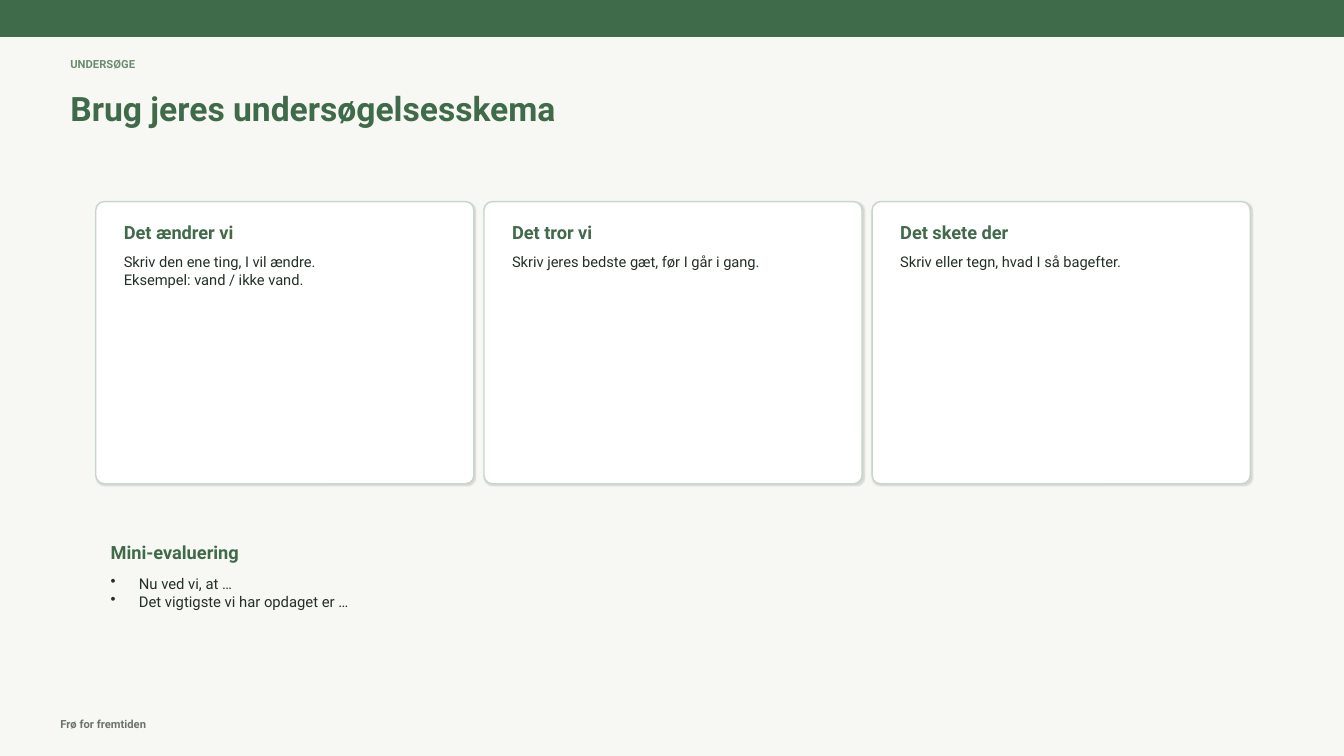
from dataclasses import dataclass

from lxml import etree
from pptx import Presentation
from pptx.dml.color import RGBColor
from pptx.enum.shapes import MSO_SHAPE
from pptx.enum.text import MSO_ANCHOR
from pptx.oxml.ns import qn
from pptx.slide import Slide
from pptx.util import Emu, Pt

PX = 9144  # 100 px to the inch
FONT = "Roboto"
RECT, ROUND_RECT = MSO_SHAPE.RECTANGLE, MSO_SHAPE.ROUNDED_RECTANGLE
TOP, MIDDLE = MSO_ANCHOR.TOP, MSO_ANCHOR.MIDDLE

PAPER = RGBColor(0xF7, 0xF8, 0xF4)
WHITE = RGBColor(0xFF, 0xFF, 0xFF)
GREEN = RGBColor(0x40, 0x6B, 0x4A)
SAGE = RGBColor(0x6D, 0x8B, 0x70)
GREY = RGBColor(0x6A, 0x75, 0x6D)
INK = RGBColor(0x24, 0x30, 0x26)
BORDER = RGBColor(0xC8, 0xD5, 0xCB)

CARD_LEFT, CARD_TOP, CARD_W, CARD_H = 95, 200, 375, 280
CARD_GAP, CARD_PAD = 10, 18
BULLET_INDENT = 28


@dataclass
class Style:
    size: float
    color: RGBColor
    bold: bool = True
    anchor: MSO_ANCHOR = MIDDLE
    bullet: bool = False


@dataclass
class Box:
    left: int
    top: int
    width: int
    height: int

    def emu(self) -> list[Emu]:
        return [Emu(v * PX) for v in (self.left, self.top, self.width, self.height)]


@dataclass
class Label:
    box: Box
    text: str
    style: Style


@dataclass
class Card:
    heading: str
    body: str


SMALL = Style(8, SAGE)
FOOTER = Style(8, GREY)
TITLE = Style(24, GREEN)
HEADING = Style(13, GREEN)
BODY = Style(10.5, INK, bold=False, anchor=TOP)
BULLETS = Style(10.6, INK, bold=False, anchor=TOP, bullet=True)

LABELS = [
    Label(Box(50, 708, 360, 20), "Frø for fremtiden", FOOTER),
    Label(Box(60, 52, 300, 22), "UNDERSØGE", SMALL),
    Label(Box(60, 86, 870, 42), "Brug jeres undersøgelsesskema", TITLE),
    Label(Box(100, 535, 180, 25), "Mini-evaluering", HEADING),
    Label(Box(100, 565, 1130, 80),
          "Nu ved vi, at …\nDet vigtigste vi har opdaget er …", BULLETS),
]
CARDS = [
    Card("Det ændrer vi", "Skriv den ene ting, I vil ændre.\nEksempel: vand / ikke vand."),
    Card("Det tror vi", "Skriv jeres bedste gæt, før I går i gang."),
    Card("Det skete der", "Skriv eller tegn, hvad I så bagefter."),
]


def add_panel(s: Slide, kind: MSO_SHAPE, box: Box, fill: RGBColor, line: RGBColor):
    sp = s.shapes.add_shape(kind, *box.emu())
    sp.fill.solid()
    sp.fill.fore_color.rgb = fill
    sp.line.color.rgb = line
    sp.line.width = Pt(1)
    sp.shadow.inherit = False
    return sp


def add_soft_shadow(sp) -> None:
    effects = sp.element.spPr.find(qn("a:effectLst"))
    shadow = etree.SubElement(effects, qn("a:outerShdw"), blurRad=str(Pt(1)),
                              dist=str(Pt(1)), dir=str(45 * 60000))
    color = etree.SubElement(shadow, qn("a:srgbClr"), val="000000")
    etree.SubElement(color, qn("a:alpha"), val="12000")


def add_label(s: Slide, label: Label) -> None:
    style = label.style
    tf = s.shapes.add_textbox(*label.box.emu()).text_frame
    tf.word_wrap = True
    tf.vertical_anchor = style.anchor
    tf.text = label.text
    for p in tf.paragraphs:
        if style.bullet:
            pPr = p._p.get_or_add_pPr()
            pPr.set("marL", str(BULLET_INDENT * PX))
            pPr.set("indent", str(-BULLET_INDENT * PX))
            etree.SubElement(pPr, qn("a:buChar"), char="•")
        for r in p.runs:
            r.font.name = FONT
            r.font.size = Pt(style.size)
            r.font.bold = style.bold
            r.font.color.rgb = style.color


def add_card(s: Slide, left: int, card: Card) -> None:
    sp = add_panel(s, ROUND_RECT, Box(left, CARD_TOP, CARD_W, CARD_H), WHITE, BORDER)
    sp.adjustments[0] = 0.03
    add_soft_shadow(sp)
    text_left, text_w = left + CARD_PAD, CARD_W - 2 * CARD_PAD
    add_label(s, Label(Box(text_left, CARD_TOP + 16, text_w, 28), card.heading, HEADING))
    add_label(s, Label(Box(text_left, CARD_TOP + 46, text_w, 222), card.body, BODY))


def main() -> None:
    prs = Presentation()
    prs.slide_width, prs.slide_height = Emu(1333 * PX), Emu(750 * PX)
    s = prs.slides.add_slide(prs.slide_layouts[6])
    s.background.fill.solid()
    s.background.fill.fore_color.rgb = PAPER

    # Top band
    add_panel(s, RECT, Box(0, 0, 1333, 36), GREEN, GREEN)

    # Three investigation cards
    for i, card in enumerate(CARDS):
        add_card(s, CARD_LEFT + i * (CARD_W + CARD_GAP), card)

    # Title, evaluation and footer texts
    for label in LABELS:
        add_label(s, label)

    prs.save("out.pptx")


if __name__ == "__main__":
    main()
